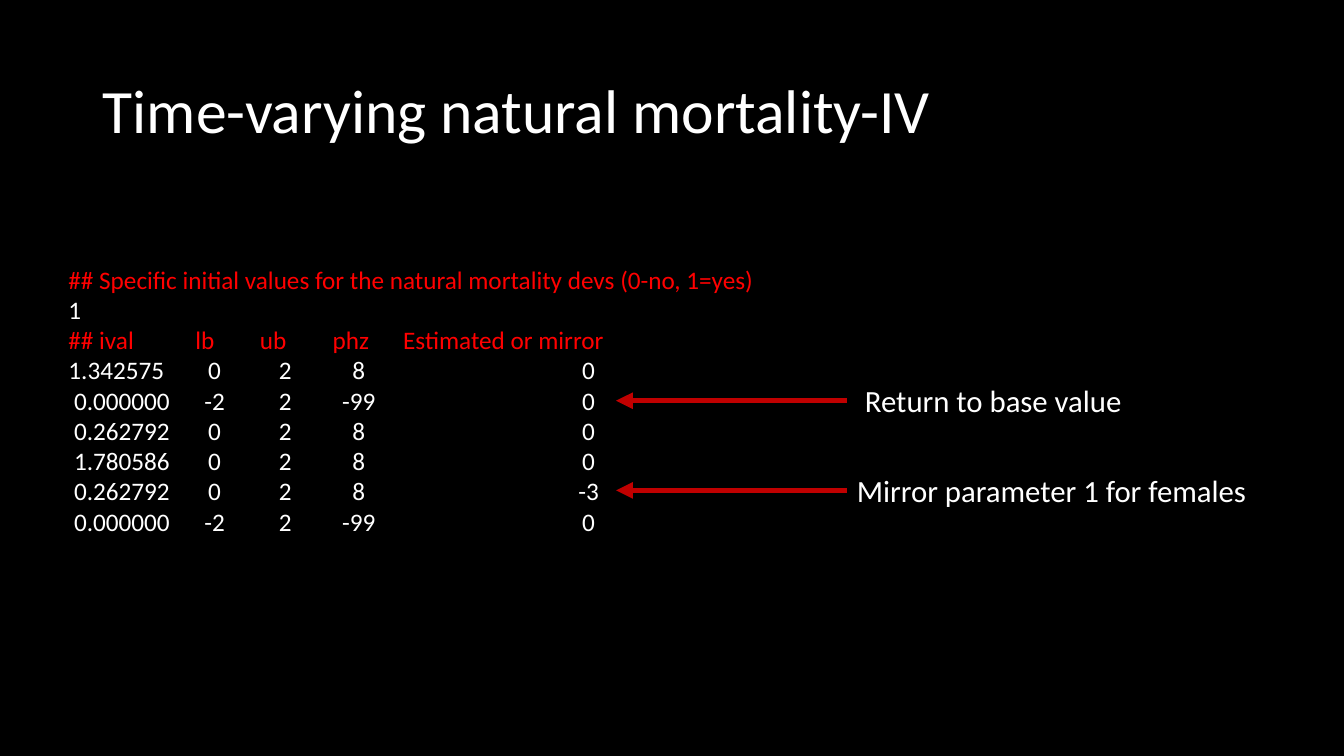
from dataclasses import dataclass
from typing import NamedTuple

from lxml.etree import SubElement
from pptx import Presentation
from pptx.dml.color import RGBColor
from pptx.enum.shapes import MSO_CONNECTOR as Connector
from pptx.enum.text import MSO_ANCHOR as Anchor, MSO_AUTO_SIZE as AutoSize, PP_ALIGN as Align
from pptx.oxml.ns import qn
from pptx.util import Inches, Pt

BLACK = RGBColor(0x00, 0x00, 0x00)
WHITE = RGBColor(0xFF, 0xFF, 0xFF)
RED = RGBColor(0xFF, 0x00, 0x00)
DARK_RED = RGBColor(0xC0, 0x00, 0x00)
FONT = "Calibri"
SLIDE_WIDTH, SLIDE_HEIGHT = Inches(13.33), Inches(7.5)


class Box(NamedTuple):
    """A rectangle in percent of the slide's width and height."""
    left: float
    top: float
    width: float
    height: float


@dataclass
class Callout:
    text: str
    box: Box
    touches_arrow: bool


TITLE_BOX = Box(6.9, 5.33, 86.25, 19.33)
LISTING_BOX = Box(4.35, 34.27, 54.24, 41.73)
ARROW_START, ARROW_TIP = 63.02, 45.84

CALLOUTS = [
    Callout("Return to base value", Box(63.62, 49.87, 20.78, 6.27), False),
    Callout("Mirror parameter 1 for females", Box(ARROW_START, 61.73, 30.83, 6.27), True),
]

# Tab stops in inches from the text's left edge
HEADER_TABS = [1.26, 1.9, 2.62, 3.32]
VALUE_TABS = [1.45, 2.15, 2.88, 5.16]

LISTING_QUESTION = "## Specific initial values for the natural mortality devs (0-no, 1=yes)"
LISTING_HEADER = ["## ival", "lb", "ub", "phz", "Estimated or mirror"]
PARAMETERS = [
    ["1.342575", "0", "2", "8", "0"],
    [" 0.000000", "-2", "2", "-99", "0"],
    [" 0.262792", "0", "2", "8", "0"],
    [" 1.780586", "0", "2", "8", "0"],
    [" 0.262792", "0", "2", "8", "-3"],
    [" 0.000000", "-2", "2", "-99", "0"],
]


def across(percent: float) -> int:
    return round(SLIDE_WIDTH * percent / 100)


def down(percent: float) -> int:
    return round(SLIDE_HEIGHT * percent / 100)


def place(shape, box: Box) -> None:
    shape.left, shape.top = across(box.left), down(box.top)
    shape.width, shape.height = across(box.width), down(box.height)


def write(paragraph, text: str, *, size: float, color: RGBColor = WHITE,
          tabs: list[float] | None = None, tab_align: str = "l") -> None:
    run = paragraph.add_run()
    run.text = text
    run.font.name, run.font.size = FONT, Pt(size)
    run.font.color.rgb = color
    paragraph.alignment = Align.LEFT
    if tabs:
        tab_list = SubElement(paragraph._p.get_or_add_pPr(), qn("a:tabLst"))
        for position in tabs:
            SubElement(tab_list, qn("a:tab"), pos=str(Inches(position)), algn=tab_align)


def add_text_box(slide, box: Box, wrap: bool):
    shape = slide.shapes.add_textbox(0, 0, 0, 0)
    place(shape, box)
    shape.text_frame.word_wrap = wrap
    return shape


def add_title(slide) -> None:
    title = slide.shapes.title
    place(title, TITLE_BOX)
    frame = title.text_frame
    frame.auto_size = AutoSize.NONE
    frame.vertical_anchor = Anchor.MIDDLE
    frame.paragraphs[0].line_spacing = 0.9
    write(frame.paragraphs[0], "Time-varying natural mortality-IV", size=44)


def add_listing(slide) -> None:
    frame = add_text_box(slide, LISTING_BOX, wrap=True).text_frame
    write(frame.paragraphs[0], LISTING_QUESTION, size=18, color=RED)
    write(frame.add_paragraph(), "1", size=18)
    write(frame.add_paragraph(), "\t".join(LISTING_HEADER), size=18, color=RED, tabs=HEADER_TABS)
    for values in PARAMETERS:
        write(frame.add_paragraph(), "\t".join(values), size=18,
              tabs=VALUE_TABS, tab_align="ctr")


def add_callout(slide, callout: Callout) -> None:
    """Draw a label and the arrow that leads from it to the listing."""
    label = add_text_box(slide, callout.box, wrap=False)
    write(label.text_frame.paragraphs[0], callout.text, size=22)

    middle = down(callout.box.top + callout.box.height / 2)
    arrow = slide.shapes.add_connector(
        Connector.STRAIGHT, across(ARROW_START), middle, across(ARROW_TIP), middle)
    if callout.touches_arrow:
        arrow.begin_connect(label, 1)
    arrow.line.color.rgb = DARK_RED
    arrow.line.width = Pt(4)
    SubElement(arrow.line._get_or_add_ln(), qn("a:tailEnd"), type="triangle")
    SubElement(arrow._element.spPr, qn("a:effectLst"))


def main() -> None:
    presentation = Presentation()
    presentation.slide_width, presentation.slide_height = SLIDE_WIDTH, SLIDE_HEIGHT
    title_only = presentation.slide_layouts[5]
    slide = presentation.slides.add_slide(title_only)
    slide.background.fill.solid()
    slide.background.fill.fore_color.rgb = BLACK
    add_title(slide)
    add_listing(slide)
    for callout in CALLOUTS:
        add_callout(slide, callout)
    presentation.save("out.pptx")


if __name__ == "__main__":
    main()
